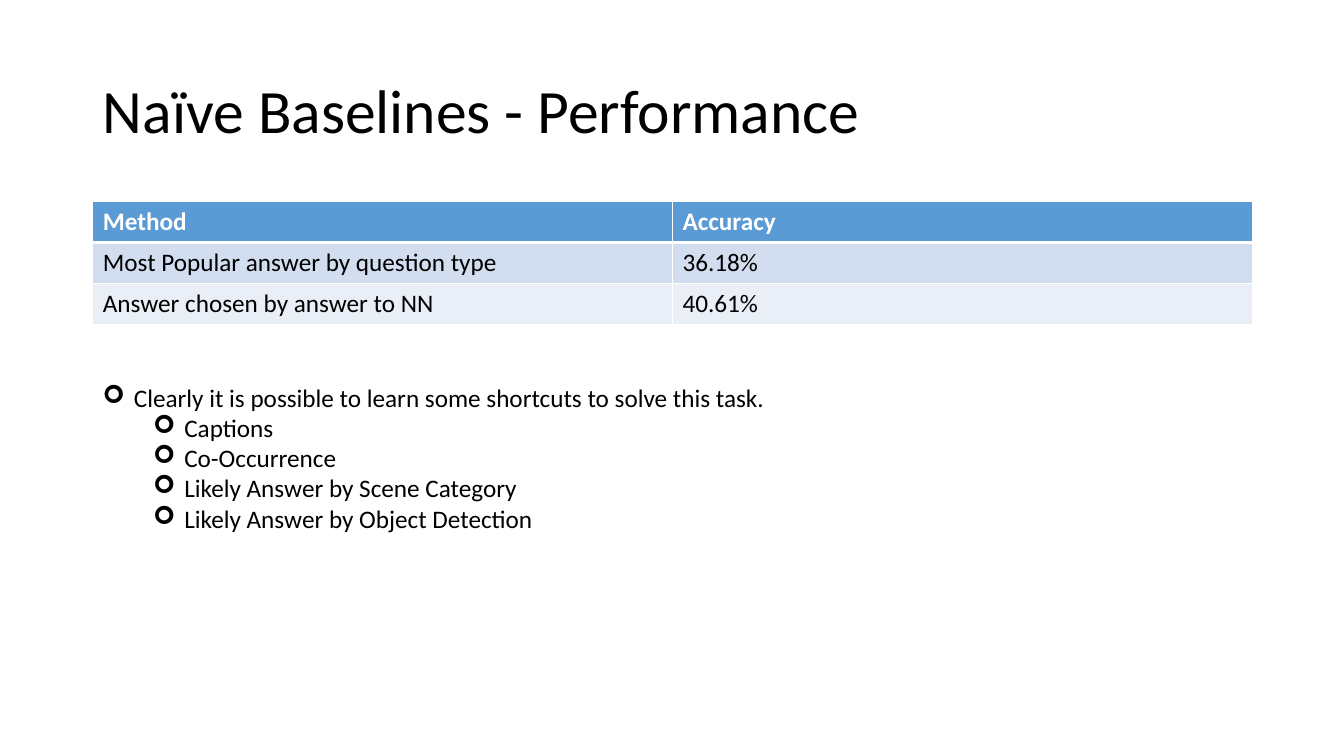
from lxml import etree
from pptx import Presentation
from pptx import util as u
from pptx.dml.color import RGBColor
from pptx.enum import text
from pptx.oxml import ns

PX = 9144
FONT = "Calibri"
HUES = {
    "ink": "000000",
    "white": "FFFFFF",
    "head": "5B9BD5",
    "odd": "D2DEEF",
    "even": "EAEFF7",
}


def style(para, size, hue="ink", bold=False):
    for run in para.runs:
        run.font.name = FONT
        run.font.size = u.Pt(size)
        run.font.bold = bold
        run.font.color.rgb = RGBColor.from_string(HUES[hue])


def edge(cell, side, width):
    props = cell._tc.get_or_add_tcPr()
    line = etree.SubElement(props, ns.qn(f"a:ln{side}"), w=str(u.Pt(width)))
    fill = etree.SubElement(line, ns.qn("a:solidFill"))
    etree.SubElement(fill, ns.qn("a:srgbClr"), val=HUES["white"])


deck = Presentation()
deck.slide_width = 1333 * PX
deck.slide_height = 750 * PX
slide = deck.slides.add_slide(deck.slide_layouts[5])

title = slide.shapes.title
title.left, title.top, title.width, title.height = [n * PX for n in (92, 40, 1150, 145)]
title.text_frame.text = "Naïve Baselines - Performance"
title.text_frame.vertical_anchor = text.MSO_ANCHOR.MIDDLE
head = title.text_frame.paragraphs[0]
head.alignment = text.PP_ALIGN.LEFT
head.line_spacing = 0.9
style(head, 44)

data = [
    ("Method", "Accuracy"),
    ("Most Popular answer by question type", "36.18%"),
    ("Answer chosen by answer to NN", "40.61%"),
]
fills = ["head", "odd", "even"]
frame = slide.shapes.add_table(3, 2, 92 * PX, 200 * PX, 1150 * PX, 122 * PX)
table = frame.table
for r, row in enumerate(data):
    for c, value in enumerate(row):
        cell = table.cell(r, c)
        cell.text_frame.text = value
        style(cell.text_frame.paragraphs[0], 18, "white" if r == 0 else "ink", r == 0)
        edge(cell, "L", 1)
        edge(cell, "R", 1)
        edge(cell, "T", 3 if r == 1 else 1)
        edge(cell, "B", 3 if r == 0 else 1)
        cell.fill.solid()
        cell.fill.fore_color.rgb = RGBColor.from_string(HUES[fills[r]])

points = [
    (0, "Clearly it is possible to learn some shortcuts to solve this task."),
    (1, "Captions"),
    (1, "Co-Occurrence"),
    (1, "Likely Answer by Scene Category"),
    (1, "Likely Answer by Object Detection"),
]
notes = slide.shapes.add_textbox(92 * PX, 374 * PX, 797 * PX, 162 * PX).text_frame
notes.word_wrap = True
notes.auto_size = text.MSO_AUTO_SIZE.SHAPE_TO_FIT_TEXT
notes.text = "\n".join(line for _, line in points)
for para, (level, _) in zip(notes.paragraphs, points):
    para.level = level
    style(para, 18)
    props = para._p.get_or_add_pPr()
    props.set("marL", str((31 + 50 * level) * PX))
    props.set("indent", str(-31 * PX))
    etree.SubElement(props, ns.qn("a:buFont"), typeface="Wingdings")
    etree.SubElement(props, ns.qn("a:buChar"), char="➢")

deck.save("out.pptx")
